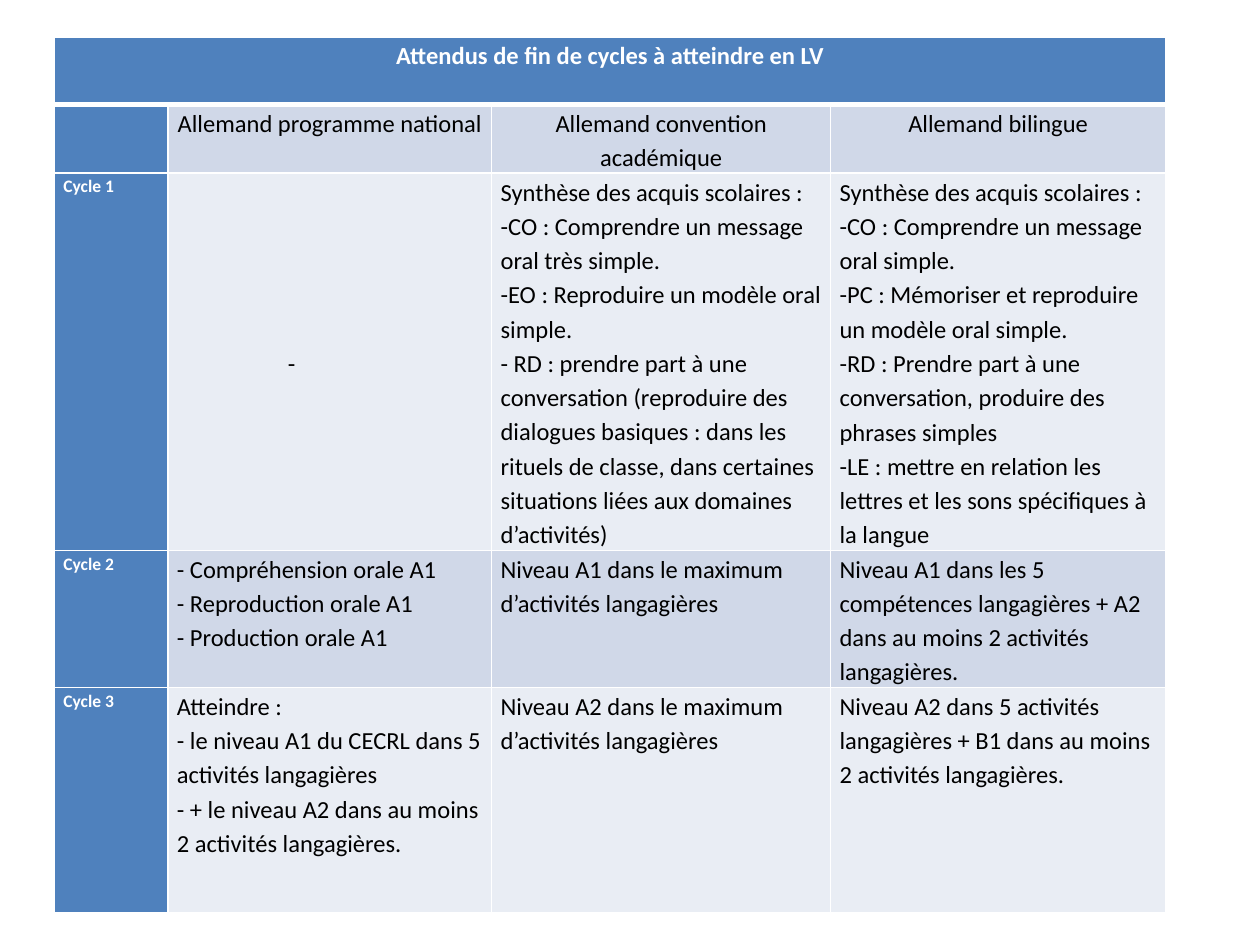
from dataclasses import dataclass

from lxml import etree
from pptx import Presentation
from pptx.dml.color import RGBColor as RGB
from pptx.enum.text import MSO_ANCHOR as ANCHOR, PP_ALIGN as ALIGN
from pptx.oxml.ns import qn
from pptx.util import Pt


@dataclass(frozen=True)
class Theme:
    font: str = "Calibri"
    body_size: float = 14
    label_size: float = 10
    line_spacing: float = 1.15
    inset: float = 5.1
    thin: float = 1
    thick: float = 3
    accent: str = "4F81BD"
    band_dark: str = "D0D8E8"
    band_light: str = "E9EDF4"
    white: str = "FFFFFF"
    black: str = "000000"


class SlideBuilder:
    def __init__(self, slide, theme):
        self.slide = slide
        self.theme = theme

    def table(self, left, top, widths, heights):
        frame = self.slide.shapes.add_table(
            len(heights), len(widths), Pt(left), Pt(top),
            Pt(sum(widths)), Pt(sum(heights)))
        tbl = frame.table
        for col, width in zip(tbl.columns, widths):
            col.width = Pt(width)
        for row, height in zip(tbl.rows, heights):
            row.height = Pt(height)
        return tbl

    def borders(self, cell, top, bottom):
        """Draw white edges; they must precede the fill in the cell properties."""
        tc_pr = cell._tc.get_or_add_tcPr()
        thin = self.theme.thin
        edges = {"lnL": thin, "lnR": thin, "lnT": top, "lnB": bottom}
        for i, (tag, width) in enumerate(edges.items()):
            ln = etree.Element(qn(f"a:{tag}"), w=str(Pt(width)))
            fill = etree.SubElement(ln, qn("a:solidFill"))
            etree.SubElement(fill, qn("a:srgbClr"), val=self.theme.white)
            tc_pr.insert(i, ln)

    def cell(self, cell, fill, top=None, bottom=None):
        t = self.theme
        cell.fill.solid()
        cell.fill.fore_color.rgb = RGB.from_string(fill)
        cell.margin_left = cell.margin_right = Pt(t.inset)
        cell.margin_top = cell.margin_bottom = 0
        self.borders(cell, top or t.thin, bottom or t.thin)

    def text(self, cell, lines, size, color, bold=False, align=ALIGN.LEFT):
        tf = cell.text_frame
        for i, line in enumerate(lines):
            p = tf.add_paragraph() if i else tf.paragraphs[0]
            p.alignment = align
            p.line_spacing = self.theme.line_spacing
            r = p.add_run()
            r.text = line
            r.font.name = self.theme.font
            r.font.size = Pt(size)
            r.font.bold = bold
            r.font.color.rgb = RGB.from_string(color)


TITLE = "Attendus de fin de cycles à atteindre en LV"
COURSES = ["Allemand programme national", "Allemand convention académique",
           "Allemand bilingue"]
CYCLES = {
    "Cycle 1": [
        ["-"],
        ["Synthèse des acquis scolaires :",
         "-CO : Comprendre un message oral très simple.",
         "-EO : Reproduire un modèle oral simple.",
         "- RD : prendre part à une conversation (reproduire des dialogues "
         "basiques : dans les rituels de classe, dans certaines situations "
         "liées aux domaines d’activités)"],
        ["Synthèse des acquis scolaires :",
         "-CO : Comprendre un message oral simple.",
         "-PC : Mémoriser et reproduire un modèle oral simple.",
         "-RD : Prendre part à une conversation, produire des phrases simples",
         "-LE : mettre en relation les lettres et les sons spécifiques à la langue"],
    ],
    "Cycle 2": [
        ["- Compréhension orale A1", "- Reproduction orale A1",
         "- Production orale A1"],
        ["Niveau A1 dans le maximum d’activités langagières"],
        ["Niveau A1 dans les 5 compétences langagières + A2 dans au moins "
         "2 activités langagières."],
    ],
    "Cycle 3": [
        ["Atteindre :", "- le niveau A1 du CECRL dans 5 activités langagières",
         "- + le niveau A2 dans au moins 2 activités langagières."],
        ["Niveau A2 dans le maximum d’activités langagières"],
        ["Niveau A2 dans 5 activités langagières + B1 dans au moins "
         "2 activités langagières."],
    ],
}


def main():
    t = Theme()
    prs = Presentation()
    prs.slide_width, prs.slide_height = Pt(720), Pt(540)
    s = SlideBuilder(prs.slides.add_slide(prs.slide_layouts[6]), t)
    tbl = s.table(31.2, 21.2, widths=[64.8, 185, 193.7, 191.5],
                  heights=[38.6, 39.2, 215.5, 78.4, 129])

    # Cell fills and borders: accent header and first column, banded body
    for row in range(len(tbl.rows)):
        band = t.band_dark if row % 2 else t.band_light
        for col in range(len(tbl.columns)):
            s.cell(tbl.cell(row, col),
                   t.accent if row == 0 or col == 0 else band,
                   top=t.thick if row == 1 else None,
                   bottom=t.thick if row == 0 else None)

    # Title row across the table
    header = tbl.cell(0, 0)
    header.merge(tbl.cell(0, 3))
    s.text(header, [TITLE], t.body_size, t.white, bold=True, align=ALIGN.CENTER)

    # Course names
    for col, course in enumerate(COURSES, start=1):
        s.text(tbl.cell(1, col), [course], t.body_size, t.black,
               align=ALIGN.CENTER)

    # One row per cycle
    for row, (cycle, goals) in enumerate(CYCLES.items(), start=2):
        s.text(tbl.cell(row, 0), [cycle], t.label_size, t.white, bold=True)
        for col, lines in enumerate(goals, start=1):
            s.text(tbl.cell(row, col), lines, t.body_size, t.black)

    # Cycle 1: lone dash indented at mid-height, last column centred vertically
    dash = tbl.cell(2, 1)
    dash.margin_left = Pt(t.inset + 63.4)
    for cell in (dash, tbl.cell(2, 3)):
        cell.vertical_anchor = ANCHOR.MIDDLE

    prs.save("out.pptx")


if __name__ == "__main__":
    main()
